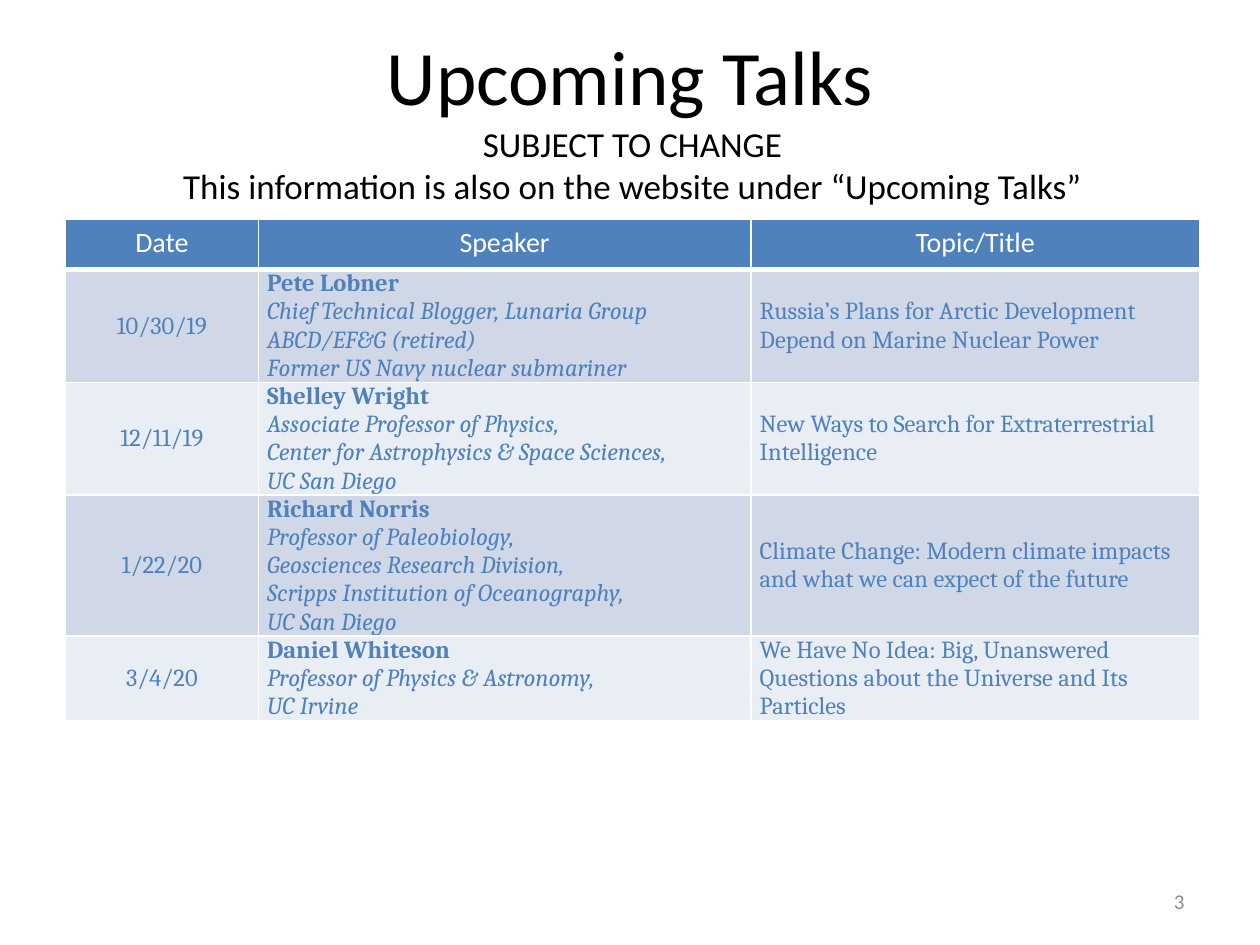
from lxml import etree
from pptx import Presentation
from pptx import util as u
from pptx.dml.color import RGBColor
from pptx.enum import text
from pptx.oxml.ns import qn

BLUE = RGBColor(0x4F, 0x81, 0xBD)
BANDS = [RGBColor(0xD0, 0xD8, 0xE8), RGBColor(0xE9, 0xED, 0xF4)]
WHITE = RGBColor(0xFF, 0xFF, 0xFF)
BLACK = RGBColor(0, 0, 0)
GRAY = RGBColor(0x8C, 0x8C, 0x8C)
MID = text.MSO_ANCHOR.MIDDLE
TOP = text.MSO_ANCHOR.TOP
LEFT, MID_X, RIGHT = text.PP_ALIGN.LEFT, text.PP_ALIGN.CENTER, text.PP_ALIGN.RIGHT

deck = Presentation()
deck.slide_width, deck.slide_height = u.Inches(10), u.Inches(7.5)
wide, high = deck.slide_width, deck.slide_height
slide = deck.slides.add_slide(deck.slide_layouts[6])


def write(frame, lines, size, face, color, align):
    frame.word_wrap = True
    frame.text = "\n".join(lines)
    for par in frame.paragraphs:
        par.alignment = align
        par.font.size = u.Pt(size)
        par.font.name = face
        par.font.color.rgb = color
        par.font.bold = False


def edge(cell, side, width):
    line = etree.SubElement(cell._tc.get_or_add_tcPr(), qn("a:" + side), w=str(u.Pt(width)))
    fill = etree.SubElement(line, qn("a:solidFill"))
    etree.SubElement(fill, qn("a:srgbClr"), val=str(WHITE))


talks = [
    ("10/30/19",
     ["Pete Lobner", "Chief Technical Blogger, Lunaria Group",
      "ABCD/EF&G (retired)", "Former US Navy nuclear submariner"],
     "Russia’s Plans for Arctic Development Depend on Marine Nuclear Power"),
    ("12/11/19",
     ["Shelley Wright", "Associate Professor of Physics,",
      "Center for Astrophysics & Space Sciences,", "UC San Diego"],
     "New Ways to Search for Extraterrestrial Intelligence"),
    ("1/22/20",
     ["Richard Norris", "Professor of Paleobiology,",
      "Geosciences Research Division,",
      "Scripps Institution of Oceanography,", "UC San Diego"],
     "Climate Change: Modern climate impacts and what we can expect of the future"),
    ("3/4/20",
     ["Daniel Whiteson", "Professor of Physics & Astronomy,", "UC Irvine"],
     "We Have No Idea: Big, Unanswered Questions about the Universe and Its Particles"),
]
heads = ["Date", "Speaker", "Topic/Title"]
cols = [1.53, 3.91, 3.56]
rows = [0.4] + [0.22 * len(talk[1]) for talk in talks]

grid = slide.shapes.add_table(
    len(rows), len(cols), u.Inches(0.52), u.Inches(1.74),
    u.Inches(sum(cols)), u.Inches(sum(rows))).table
for col, size in zip(grid.columns, cols):
    col.width = u.Inches(size)
for row, size in zip(grid.rows, rows):
    row.height = u.Inches(size)

for r, row in enumerate(grid.rows):
    for c, cell in enumerate(row.cells):
        edge(cell, "lnL", 1)
        edge(cell, "lnR", 1)
        edge(cell, "lnT", 3 if r == 1 else 1)
        edge(cell, "lnB", 1 if r else 3)
        cell.fill.solid()
        if r == 0:
            cell.fill.fore_color.rgb = BLUE
            write(cell.text_frame, [heads[c]], 16, "Calibri", WHITE, MID_X)
            continue
        cell.fill.fore_color.rgb = BANDS[(r - 1) % 2]
        cell.vertical_anchor = MID
        cell.margin_left = cell.margin_right = u.Inches(0.07)
        cell.margin_top = cell.margin_bottom = 0
        item = talks[r - 1][c]
        lines = item if c == 1 else [item]
        write(cell.text_frame, lines, 14, "Cambria", BLUE, LEFT if c else MID_X)
        if c == 1:
            name, *roles = cell.text_frame.paragraphs
            name.font.bold = True
            for role in roles:
                role.font.italic = True

notes = ["SUBJECT TO CHANGE",
         "This information is also on the website under “Upcoming Talks”"]
boxes = [
    (0, -0.005, 1, 0.167, ["Upcoming Talks"], 44, BLACK, MID_X, MID),
    (0.052, 0.123, 0.9, 0.103, notes, 20, BLACK, MID_X, TOP),
    (0.717, 0.927, 0.233, 0.053, ["3"], 12, GRAY, RIGHT, MID),
]
for x, y, w, h, lines, size, color, align, anchor in boxes:
    box = slide.shapes.add_textbox(
        int(x * wide), int(y * high), int(w * wide), int(h * high))
    box.text_frame.vertical_anchor = anchor
    write(box.text_frame, lines, size, "Calibri", color, align)

deck.save("out.pptx")
